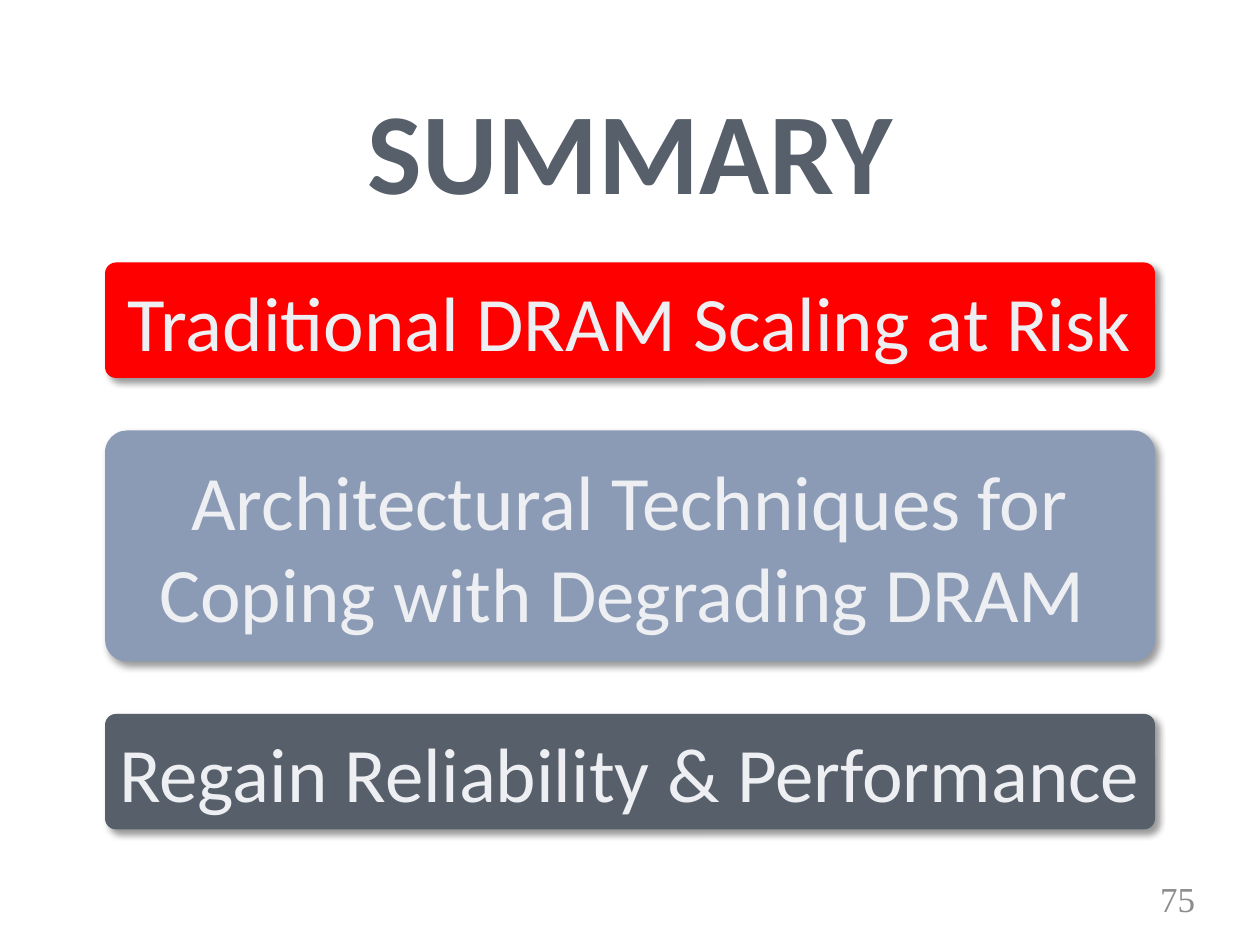
from lxml.etree import SubElement
from pptx import Presentation
from pptx.dml.color import RGBColor
from pptx.enum.shapes import MSO_SHAPE as Shape
from pptx.enum.text import MSO_ANCHOR as Anchor, MSO_AUTO_SIZE as AutoSize, PP_ALIGN as Align
from pptx.oxml.ns import qn
from pptx.util import Emu, Pt

PX = 914400 // 120
LAYOUT_TITLE_ONLY = 5
MARGINS = ("margin_left", "margin_top", "margin_right", "margin_bottom")
TITLE_FONT = {"name": "Calibri", "size": Pt(66), "bold": True}
POINT_FONT = {"name": "Calibri", "size": Pt(44)}
SPACE_FONT = {"name": "Calibri", "size": Pt(36)}
NUMBER_FONT = {"name": "Times New Roman", "size": Pt(20)}
POINT_GAP = 50
POINTS = [
    ("FF0000", 110, ["Traditional DRAM Scaling at Risk"], ""),
    ("8B9BB5", 220, ["Architectural Techniques for", "Coping with Degrading DRAM"], " "),
    ("565F6A", 110, ["Regain Reliability & Performance"], ""),
]


def px(length):
    return Emu(length * PX)


def color(hex_string):
    return RGBColor.from_string(hex_string)


def apply_format(target, values):
    for attribute, value in values.items():
        setattr(target, attribute, value)


def add_run(paragraph, text, font_values, text_color):
    run = paragraph.add_run()
    run.text = text
    apply_format(run.font, font_values)
    run.font.color.rgb = color(text_color)


def prepare_frame(frame, align):
    values = {"word_wrap": True, "auto_size": AutoSize.NONE, "vertical_anchor": Anchor.MIDDLE}
    apply_format(frame, values)
    paragraph = frame.paragraphs[0]
    paragraph.alignment = align
    return paragraph


def add_shadow(panel):
    effects = SubElement(panel._element.spPr, qn("a:effectLst"))
    shadow = SubElement(effects, qn("a:outerShdw"), blurRad=str(Pt(4)), dist=str(Pt(3)),
                        dir="2700000", algn="tl", rotWithShape="0")
    shade = SubElement(shadow, qn("a:srgbClr"), val="000000")
    SubElement(shade, qn("a:alpha"), val="40000")


def place_title(slide, left, top, width, height):
    title = slide.shapes.title
    box = {"left": px(left), "top": px(top), "width": px(width), "height": px(height)}
    apply_format(title, box)
    paragraph = prepare_frame(title.text_frame, Align.CENTER)
    paragraph.line_spacing = 0.9
    add_run(paragraph, "SUMMARY", TITLE_FONT, "565F6A")


def add_point(slide, left, top, width, height, fill, lines, ending):
    panel = slide.shapes.add_shape(Shape.ROUNDED_RECTANGLE,
                                   px(left), px(top), px(width), px(height))
    panel.adjustments[0] = 0.095
    panel.fill.solid()
    panel.fill.fore_color.rgb = color(fill)
    panel.line.fill.background()
    add_shadow(panel)
    apply_format(panel.text_frame, dict.fromkeys(MARGINS, 0))
    paragraph = prepare_frame(panel.text_frame, Align.CENTER)
    for index, line in enumerate(lines):
        if index:
            paragraph.add_line_break()
        add_run(paragraph, line, POINT_FONT, "EDEFF3")
    if ending:
        add_run(paragraph, ending, SPACE_FONT, "EDEFF3")


def add_points(slide, left, top, width):
    for fill, height, lines, ending in POINTS:
        add_point(slide, left, top, width, height, fill, lines, ending)
        top += height + POINT_GAP


def add_page_number(slide, left, top, width, height):
    number = slide.shapes.add_textbox(px(left), px(top), px(width), px(height))
    paragraph = prepare_frame(number.text_frame, Align.RIGHT)
    add_run(paragraph, "75", NUMBER_FONT, "8C8C8C")


def main():
    deck = Presentation()
    apply_format(deck, {"slide_width": px(1200), "slide_height": px(900)})
    slide = deck.slides.add_slide(deck.slide_layouts[LAYOUT_TITLE_ONLY])
    place_title(slide, 50, 90, 1100, 120)
    add_page_number(slide, 1060, 832, 90, 48)
    add_points(slide, 100, 250, 1000)
    deck.save("out.pptx")


if __name__ == "__main__":
    main()
